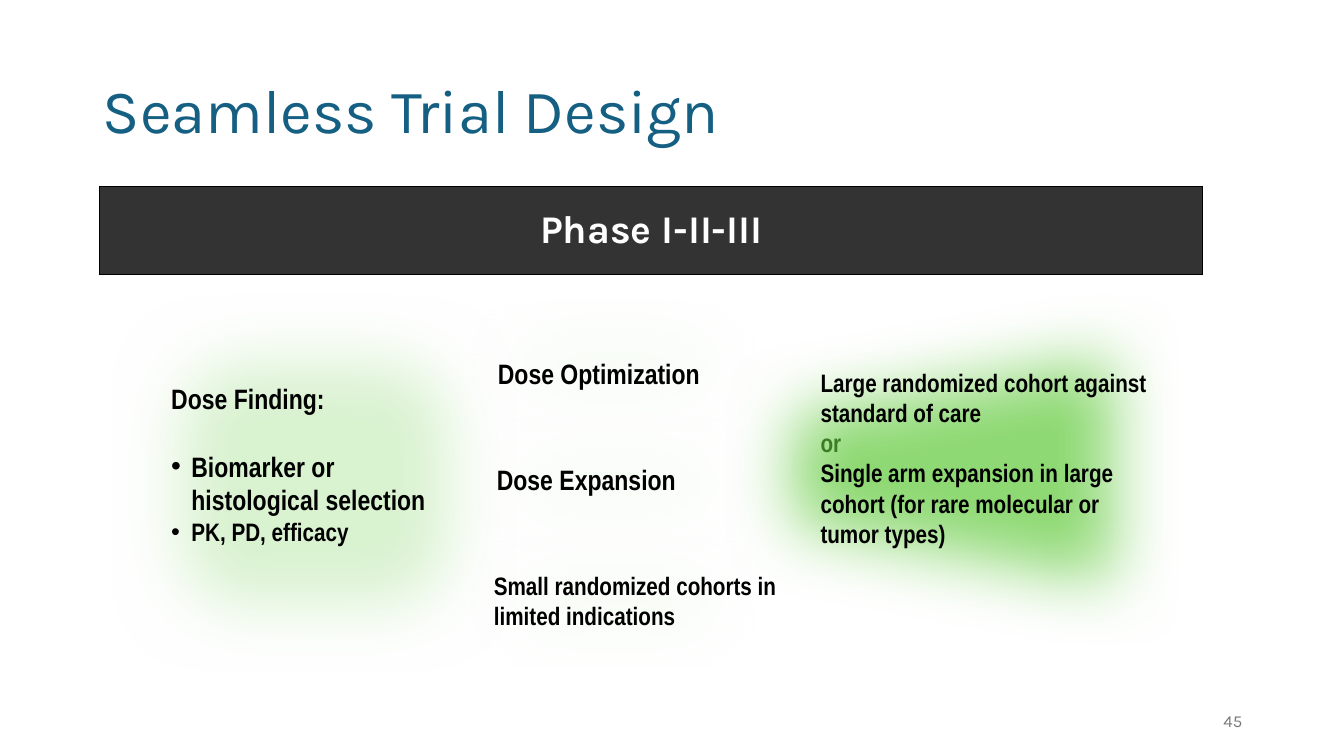
from dataclasses import dataclass

import pptx
import pptx.dml.color
import pptx.enum.shapes
import pptx.enum.text
import pptx.oxml
import pptx.oxml.ns
import pptx.util

Inches = pptx.util.Inches
Pt = pptx.util.Pt
RGB = pptx.dml.color.RGBColor.from_string
MSO_SHAPE = pptx.enum.shapes.MSO_SHAPE
PP_ALIGN = pptx.enum.text.PP_ALIGN
MIDDLE = pptx.enum.text.MSO_ANCHOR.MIDDLE
NAMESPACE = pptx.oxml.ns.nsdecls("a")


@dataclass(frozen=True)
class Theme:
    heading_font: str = "Karla"
    body_font: str = "Arial Narrow"
    title: str = "156082"
    number: str = "797979"
    banner: str = "333333"
    white: str = "FFFFFF"
    black: str = "000000"
    pale_green: str = "D9F2D0"
    light_green: str = "B4E5A2"
    green: str = "8ED973"
    dark_green: str = "3B7D23"
    title_size: int = 44
    banner_size: int = 28
    large_size: int = 20
    body_size: int = 18
    number_size: int = 12
    soft_edge: int = 50


theme = Theme()


def add_run(paragraph, text, size, color=theme.black, font=theme.body_font, bold=True):
    run = paragraph.add_run()
    run.text = text
    run.font.name = font
    run.font.size = Pt(size)
    run.font.bold = bold
    run.font.color.rgb = RGB(color)


def add_text_frame(slide, left, top, width, height):
    text_box = slide.shapes.add_textbox(Inches(left), Inches(top), Inches(width), Inches(height))
    text_box.text_frame.word_wrap = True
    return text_box.text_frame


presentation = pptx.Presentation()
presentation.slide_width = Inches(13.33)
presentation.slide_height = Inches(7.5)
slide = presentation.slides.add_slide(presentation.slide_layouts[5])

title = slide.shapes.title
title.left, title.top = Inches(0.92), Inches(0.4)
title.width, title.height = Inches(11.5), Inches(1.45)
title.text_frame.vertical_anchor = MIDDLE
paragraph = title.text_frame.paragraphs[0]
paragraph.alignment = PP_ALIGN.LEFT
paragraph.line_spacing = 0.9
add_run(paragraph, "Seamless Trial Design", theme.title_size, theme.title, theme.heading_font, False)

number_frame = add_text_frame(slide, 9.42, 6.95, 3, 0.4)
number_frame.vertical_anchor = MIDDLE
paragraph = number_frame.paragraphs[0]
paragraph.alignment = PP_ALIGN.RIGHT
add_run(paragraph, "45", theme.number_size, theme.number, theme.heading_font, False)

banner = slide.shapes.add_table(1, 1, Inches(0.99), Inches(1.85), Inches(10.94), Inches(0.87)).table
banner.first_row = False
banner.horz_banding = False
cell = banner.cell(0, 0)
cell.vertical_anchor = MIDDLE
paragraph = cell.text_frame.paragraphs[0]
paragraph.alignment = PP_ALIGN.CENTER
add_run(paragraph, "Phase I-II-III", theme.banner_size, theme.white, theme.heading_font)
cell_properties = cell._tc.get_or_add_tcPr()
for side in ("lnL", "lnR", "lnT", "lnB"):
    cell_properties.append(pptx.oxml.parse_xml(
        f'<a:{side} {NAMESPACE} w="{Pt(1)}"><a:solidFill>'
        f'<a:srgbClr val="{theme.black}"/></a:solidFill></a:{side}>'))
cell.fill.solid()
cell.fill.fore_color.rgb = RGB(theme.banner)

rounded = MSO_SHAPE.ROUNDED_RECTANGLE
stages = [
    (rounded, 1.1, 2.9, 4.03, 3.78, theme.pale_green, 0),
    (rounded, 4.34, 2.9, 3.5, 1.44, theme.light_green, 0),
    (rounded, 4.38, 4.07, 3.42, 1.44, theme.light_green, 0),
    (rounded, 4.35, 5.24, 3.49, 1.44, theme.light_green, 0),
    (MSO_SHAPE.FLOWCHART_MANUAL_OPERATION, 7.4, 2.38, 4.11, 4.55, theme.green, 90),
]
for preset, left, top, width, height, color, rotation in stages:
    shape = slide.shapes.add_shape(preset, Inches(left), Inches(top), Inches(width), Inches(height))
    shape.rotation = rotation
    shape.fill.solid()
    shape.fill.fore_color.rgb = RGB(color)
    shape.line.fill.background()
    shape.shadow.inherit = False
    effects = shape._element.spPr.find(pptx.oxml.ns.qn("a:effectLst"))
    effects.append(pptx.oxml.parse_xml(f'<a:softEdge {NAMESPACE} rad="{Pt(theme.soft_edge)}"/>'))

finding_frame = add_text_frame(slide, 1.6, 3.74, 2.78, 1.75)
paragraph = finding_frame.paragraphs[0]
paragraph.space_after = Pt(24)
add_run(paragraph, "Dose Finding:", theme.large_size)
for text, size in [
    ("Biomarker or histological selection", theme.large_size),
    ("PK, PD, efficacy", theme.body_size),
]:
    paragraph = finding_frame.add_paragraph()
    properties = paragraph._p.get_or_add_pPr()
    properties.set("marL", str(Inches(0.2)))
    properties.set("indent", str(-Inches(0.2)))
    properties.append(pptx.oxml.parse_xml(f'<a:buFont {NAMESPACE} typeface="Arial"/>'))
    properties.append(pptx.oxml.parse_xml(f'<a:buChar {NAMESPACE} char="•"/>'))
    add_run(paragraph, text, size)

for left, top, width, height, text, size in [
    (4.84, 3.49, 2.43, 0.44, "Dose Optimization", theme.large_size),
    (4.83, 4.54, 2.43, 0.44, "Dose Expansion", theme.large_size),
    (4.8, 5.61, 3, 0.71, "Small randomized cohorts in limited indications", theme.body_size),
]:
    stage_frame = add_text_frame(slide, left, top, width, height)
    add_run(stage_frame.paragraphs[0], text, size)

cohort_frame = add_text_frame(slide, 8.04, 3.59, 3.47, 1.92)
paragraph = cohort_frame.paragraphs[0]
add_run(paragraph, "Large randomized cohort against standard of care", theme.body_size)
paragraph = cohort_frame.add_paragraph()
add_run(paragraph, "or", theme.body_size, theme.dark_green)
paragraph = cohort_frame.add_paragraph()
add_run(paragraph, "Single arm expansion in large cohort (for rare molecular or tumor types)", theme.body_size)

presentation.save("out.pptx")
